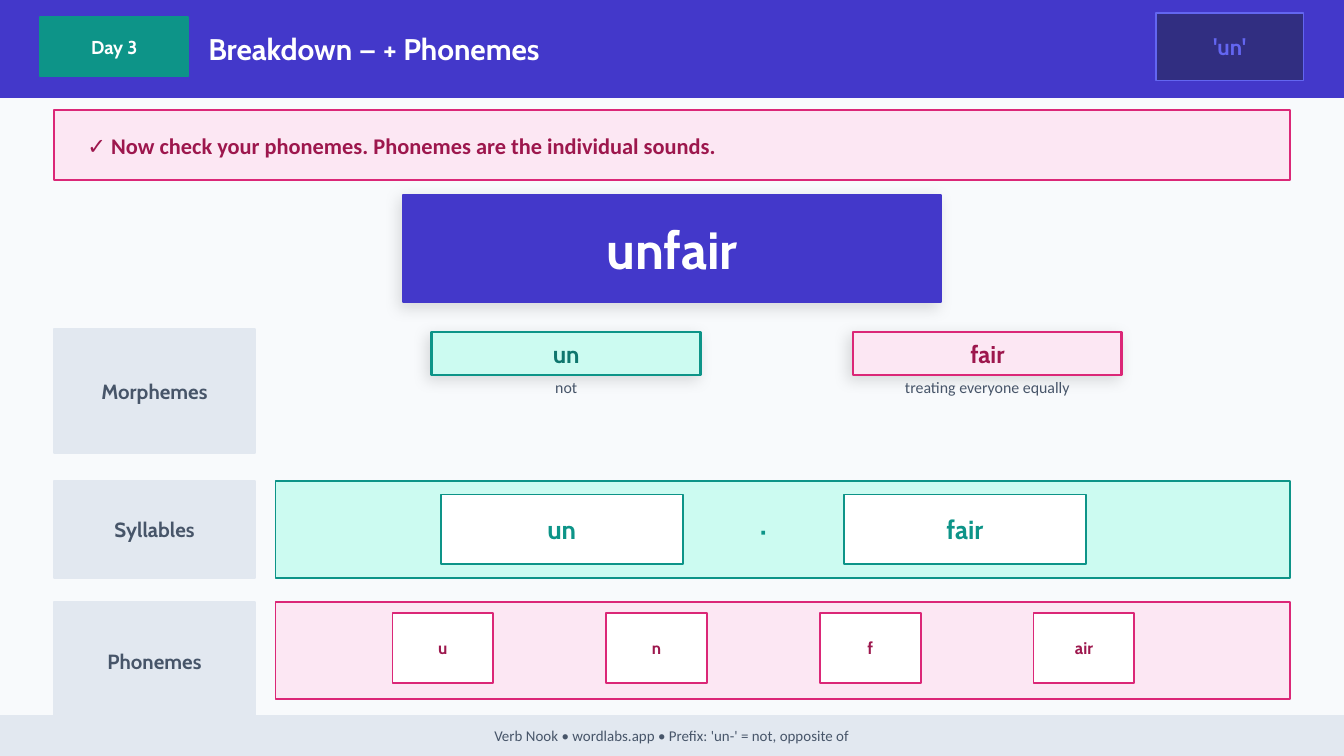
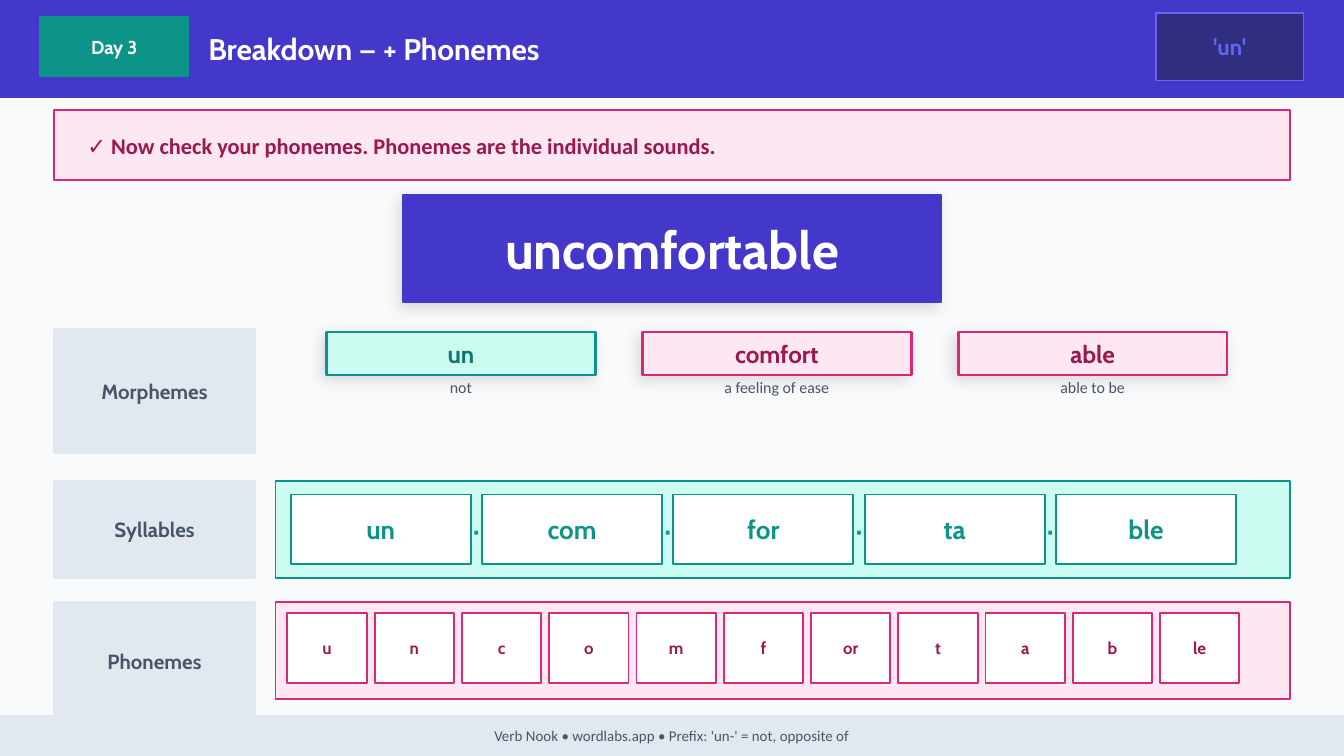
from collections import namedtuple
from dataclasses import dataclass

from lxml.etree import SubElement
from pptx import Presentation
from pptx.dml.color import RGBColor
from pptx.enum.shapes import MSO_SHAPE
from pptx.enum.text import MSO_ANCHOR, PP_ALIGN
from pptx.oxml.ns import qn
from pptx.util import Pt

Box = namedtuple("Box", "x y w h")
Tone = namedtuple("Tone", "fill edge ink")
Word = namedtuple("Word", "whole morphs beats sounds")


@dataclass(frozen=True)
class Theme:
    """Colours, fonts and type sizes shared by the slides."""

    page: str = "F8FAFC"
    white: str = "FFFFFF"
    brand: str = "4338CA"
    teal: Tone = Tone("CCFBF1", "0D9488", "0F766E")
    pink: Tone = Tone("FCE7F3", "DB2777", "9D174D")
    night: Tone = Tone("312E81", "6366F1", "6366F1")
    slate: Tone = Tone("E2E8F0", "E2E8F0", "475569")
    head: str = "Cabin"
    body: str = "Calibri"
    hero: float = 28
    title: float = 16
    dot: float = 16
    beat: float = 14
    morph: float = 13
    lead: float = 12
    label: float = 11
    badge: float = 10
    sound: float = 9
    gloss: float = 8.5
    foot: float = 8


LOOK = Theme()
WORDS = (
    Word(
        "unfair",
        (("un", "not"), ("fair", "treating everyone equally")),
        ("un", "fair"),
        ("u", "n", "f", "air"),
    ),
    Word(
        "uncomfortable",
        (("un", "not"), ("comfort", "a feeling of ease"), ("able", "able to be")),
        ("un", "com", "for", "ta", "ble"),
        ("u", "n", "c", "o", "m", "f", "or", "t", "a", "b", "le"),
    ),
)


def rgb(code):
    """Turn a hex code into a colour."""
    return RGBColor.from_string(code)


def write(frame, text, *, size, ink, face=LOOK.head, bold=True,
          align=PP_ALIGN.CENTER, anchor=MSO_ANCHOR.MIDDLE, inset=0):
    """Put one formatted line of text in a frame."""
    frame.word_wrap = True
    frame.vertical_anchor = anchor
    frame.margin_left = Pt(inset)
    frame.margin_right = frame.margin_top = frame.margin_bottom = 0
    line = frame.paragraphs[0]
    line.alignment = align
    run = line.add_run()
    run.text = text
    font = run.font
    font.name, font.size, font.bold = face, Pt(size), bold
    font.color.rgb = rgb(ink)


def card(slide, box, fill, edge, weight=1, lift=False):
    """Draw a rectangle and return its text frame."""
    shape = slide.shapes.add_shape(MSO_SHAPE.RECTANGLE, *map(Pt, box))
    shape.shadow.inherit = False
    shape.fill.solid()
    shape.fill.fore_color.rgb = rgb(fill)
    shape.line.color.rgb = rgb(edge)
    shape.line.width = Pt(weight)
    if lift:
        glow = shape._element.spPr.find(qn("a:effectLst"))
        cast = SubElement(glow, qn("a:outerShdw"), blurRad=str(Pt(8)),
                          dist=str(Pt(3)), dir="8100000",
                          algn="bl", rotWithShape="0")
        tint = SubElement(cast, qn("a:srgbClr"), val="000000")
        SubElement(tint, qn("a:alpha"), val="12000")
    return shape.text_frame


def note(slide, box):
    """Add a text box and return its frame."""
    return slide.shapes.add_textbox(*map(Pt, box)).text_frame


def spread(box, count, most, least):
    """Return the tile width, gap and left edges that fill a box evenly."""
    wide = min(most, (box.w - least * (count + 1)) / count)
    gap = (box.w - wide * count) / (count + 1)
    return wide, gap, [box.x + gap + i * (wide + gap) for i in range(count)]


def header(slide, box):
    """Draw the top band with its day, title and prefix."""
    card(slide, box, LOOK.brand, LOOK.brand)
    day = Box(box.x + 21.6, box.y + 9.36, 79.2, 31.68)
    write(card(slide, day, LOOK.teal.edge, LOOK.teal.edge), "Day 3",
          size=LOOK.badge, ink=LOOK.white)
    write(note(slide, Box(box.x + 111.6, box.y, 583.2, box.h)),
          "Breakdown — + Phonemes", size=LOOK.title, ink=LOOK.white,
          align=PP_ALIGN.LEFT)
    tag = Box(box.x + box.w - 100.8, box.y + 7.2, 79.2, 36)
    write(card(slide, tag, LOOK.night.fill, LOOK.night.edge), "'un'",
          size=LOOK.lead, ink=LOOK.night.ink)


def footer(slide, box):
    """Draw the bottom band."""
    write(card(slide, box, LOOK.slate.fill, LOOK.slate.edge),
          "Verb Nook • wordlabs.app • Prefix: 'un-' = not, opposite of",
          size=LOOK.foot, ink=LOOK.slate.ink, face=LOOK.body, bold=False)


def prompt(slide, box):
    """Draw the task banner."""
    write(card(slide, box, LOOK.pink.fill, LOOK.pink.edge),
          "✓ Now check your phonemes. Phonemes are the individual sounds.",
          size=LOOK.lead, ink=LOOK.pink.ink, face=LOOK.body,
          align=PP_ALIGN.LEFT, inset=18)


def hero(slide, box, text):
    """Draw the whole word."""
    write(card(slide, box, LOOK.brand, LOOK.brand, lift=True), text,
          size=LOOK.hero, ink=LOOK.white)


def label(slide, box, text):
    """Draw the name of a row."""
    write(card(slide, box, LOOK.slate.fill, LOOK.slate.edge), text,
          size=LOOK.label, ink=LOOK.slate.ink)


def morphs(slide, box, parts):
    """Draw the morphemes with their meanings."""
    wide, _, lefts = spread(box, len(parts), 144, 6)
    for i, (x, (part, sense)) in enumerate(zip(lefts, parts)):
        tone = LOOK.pink if i else LOOK.teal
        tile = Box(x, box.y + 1.44, wide, 23.04)
        write(card(slide, tile, tone.fill, tone.edge, 1.5, True), part,
              size=LOOK.morph, ink=tone.ink)
        write(note(slide, Box(x, box.y + 25.92, wide, 15.84)), sense,
              size=LOOK.gloss, ink=LOOK.slate.ink, face=LOOK.body,
              bold=False, anchor=MSO_ANCHOR.TOP)


def track(slide, box, parts, tone, *, most, least, top, size, ink, dot=""):
    """Draw a band of even tiles, with an optional mark between them."""
    card(slide, box, tone.fill, tone.edge)
    inner = Box(box.x + 2.16, box.y + top, 518.4, 37.44)
    wide, gap, lefts = spread(inner, len(parts), most, least)
    for i, (x, part) in enumerate(zip(lefts, parts)):
        if dot and i:
            write(note(slide, Box(x - gap, inner.y, gap, inner.h)), dot,
                  size=LOOK.dot, ink=ink)
        tile = Box(x, inner.y, wide, inner.h)
        write(card(slide, tile, LOOK.white, tone.edge), part,
              size=size, ink=ink)


def build(deck, word):
    """Add the slide that breaks down one word."""
    slide = deck.slides.add_slide(deck.slide_layouts[6])
    slide.background.fill.solid()
    slide.background.fill.fore_color.rgb = rgb(LOOK.page)
    header(slide, Box(0, 0, 720, 51.84))
    footer(slide, Box(0, 383.4, 720, 21.6))
    prompt(slide, Box(28.8, 59.04, 662.4, 37.44))
    hero(slide, Box(216, 104.4, 288, 57.6), word.whole)
    label(slide, Box(28.8, 176.4, 108, 66.24), "Morphemes")
    morphs(slide, Box(149.76, 176.4, 532.8, 66.24), word.morphs)
    label(slide, Box(28.8, 257.76, 108, 51.84), "Syllables")
    track(slide, Box(147.6, 257.76, 543.6, 51.84), word.beats, LOOK.teal,
          most=129.6, least=6, top=7.2, size=LOOK.beat,
          ink=LOOK.teal.edge, dot="·")
    label(slide, Box(28.8, 322.56, 108, 63.36), "Phonemes")
    track(slide, Box(147.6, 322.56, 543.6, 51.84), word.sounds, LOOK.pink,
          most=54, least=4.2, top=5.76, size=LOOK.sound,
          ink=LOOK.pink.ink)


def main():
    """Build and save the deck."""
    deck = Presentation()
    deck.slide_width, deck.slide_height = Pt(720), Pt(405)
    for word in WORDS:
        build(deck, word)
    deck.save("out.pptx")


if __name__ == "__main__":
    main()
